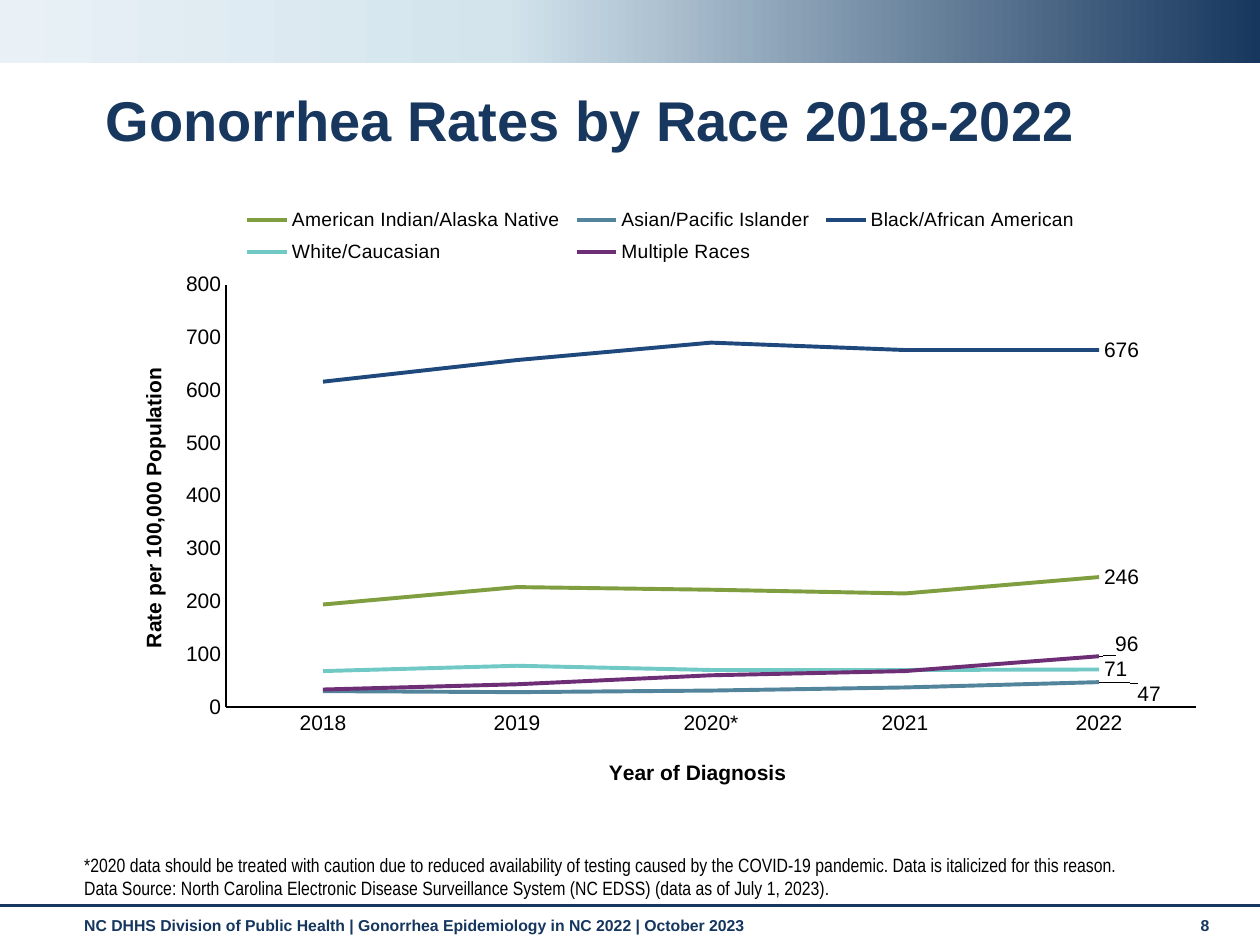
import pptx
import pptx.chart.data
import pptx.dml.color
import pptx.enum.chart
import pptx.enum.shapes
import pptx.enum.text
import pptx.oxml
import pptx.oxml.ns
import pptx.util
from lxml import etree

Inches, Pt = pptx.util.Inches, pptx.util.Pt
XL = pptx.enum.chart
qn = pptx.oxml.ns.qn

COLORS = {
    "navy": "17375E", "footer": "15365E", "text": "000000",
    "pale": "D3E4ED", "mist": "E9F1F6",
}
YEARS = ["2018", "2019", "2020*", "2021", "2022"]
# Name, line colour, yearly rates, shift of the last label as fractions of the chart
SERIES = [
    ("American Indian/Alaska Native", "7F9E3F", (194, 227, 222, 215, 246), None),
    ("Asian/Pacific Islander", "52849C", (30, 28, 31, 37, 47), (0.03, 0.02)),
    ("Black/African American", "1F497D", (616, 657, 690, 676, 676), None),
    ("White/Caucasian", "71C9C5", (68, 78, 70, 70, 71), None),
    ("Multiple Races", "6D2E75", (33, 43, 60, 68, 96), (0.01, -0.02)),
]


def rgb(color):
    return pptx.dml.color.RGBColor.from_string(COLORS.get(color, color))


def style_font(font, size, color="text", bold=False, name="Arial"):
    font.name, font.size, font.bold = name, Pt(size), bold
    font.color.rgb = rgb(color)


def add_text(slide, box, lines, size, color, bold=False, name="Arial",
             anchor=pptx.enum.text.MSO_ANCHOR.TOP, spacing=None):
    tf = slide.shapes.add_textbox(*map(Inches, box)).text_frame
    tf.word_wrap = True
    tf.vertical_anchor = anchor
    tf.text = "\n".join(lines)
    for p in tf.paragraphs:
        style_font(p.font, size, color, bold, name)
        p.line_spacing = spacing


def set_layout(parent, index, x, y, w=None, h=None, inner=False, fixed=True):
    """Place a chart part by fractions of the chart's size."""
    for old in parent.findall(qn("c:layout")):
        parent.remove(old)
    layout = etree.Element(qn("c:layout"))
    manual = etree.SubElement(layout, qn("c:manualLayout"))
    values = [("layoutTarget", "inner" if inner else None),
              ("xMode", "edge" if fixed else None),
              ("yMode", "edge" if fixed else None),
              ("x", x), ("y", y), ("w", w), ("h", h)]
    for tag, value in values:
        if value is not None:
            etree.SubElement(manual, qn("c:" + tag)).set("val", str(value))
    parent.insert(index, layout)


def add_band(slide, left, top, width, height):
    sp = slide.shapes.add_shape(pptx.enum.shapes.MSO_SHAPE.RECTANGLE,
                                Inches(left), Inches(top), Inches(width), Inches(height))
    sp.shadow.inherit = False
    sp.line.fill.background()
    sp.fill.gradient()
    sp.fill.gradient_angle = 180
    stops = sp._element.spPr.find(qn("a:gradFill")).find(qn("a:gsLst"))
    for gs in list(stops):
        stops.remove(gs)
    for percent, color in ((0, "navy"), (60, "pale"), (100, "mist")):
        gs = etree.SubElement(stops, qn("a:gs"), pos=str(percent * 1000))
        etree.SubElement(gs, qn("a:srgbClr"), val=COLORS[color])


def add_footer(slide, left, top, width):
    rule = slide.shapes.add_connector(pptx.enum.shapes.MSO_CONNECTOR.STRAIGHT,
                                      Inches(left), Inches(top),
                                      Inches(left + width), Inches(top))
    rule.line.color.rgb = rgb("navy")
    rule.line.width = Pt(1.75)
    etree.SubElement(rule._element.spPr, qn("a:effectLst"))
    add_text(slide, (left + 0.57, top + 0.03, 8.74, 0.29),
             ["NC DHHS Division of Public Health | Gonorrhea Epidemiology in NC 2022 | October 2023"],
             9, "footer", True)
    add_text(slide, (left + 9.43, top + 0.03, 0.44, 0.3), ["8"], 9, "footer", True)


def style_axis(axis, title, x, y):
    axis.has_major_gridlines = False
    axis.major_tick_mark = axis.minor_tick_mark = XL.XL_TICK_MARK.NONE
    axis.format.line.color.rgb = rgb("text")
    axis.format.line.width = Pt(0.75)
    style_font(axis.tick_labels.font, 12)
    tf = axis.axis_title.text_frame
    tf.text = title
    style_font(tf.paragraphs[0].font, 12, bold=True)
    set_layout(axis.axis_title._element, 1, x, y)


def style_series(series, color, shift):
    series.smooth = False
    series.marker.style = XL.XL_MARKER_STYLE.NONE
    series.format.line.color.rgb = rgb(color)
    series.format.line.width = Pt(2.25)
    # Only the latest year is labelled
    label = series.points[len(YEARS) - 1].data_label
    style_font(label.font, 12)
    label.position = XL.XL_LABEL_POSITION.RIGHT
    if shift:
        set_layout(series._element.find(".//" + qn("c:dLbl")), 1, *shift, fixed=False)


def add_rate_chart(slide, left, top, width, height):
    data = pptx.chart.data.CategoryChartData(number_format="#,##0")
    data.categories = YEARS
    for name, _, values, _ in SERIES:
        data.add_series(name, values)
    chart = slide.shapes.add_chart(XL.XL_CHART_TYPE.LINE, Inches(left), Inches(top),
                                   Inches(width), Inches(height), data).chart
    chart.has_title = False
    style_font(chart.font, 10)
    chart.plots[0].vary_by_categories = False
    for series, (_, color, _, shift) in zip(chart.plots[0].series, SERIES):
        style_series(series, color, shift)

    # Axes
    style_axis(chart.category_axis, "Year of Diagnosis", 0.45, 0.92)
    style_axis(chart.value_axis, "Rate per 100,000 Population", 0.03, 0.28)
    chart.value_axis.minimum_scale = 0
    chart.value_axis.maximum_scale = 800
    chart.value_axis.major_unit = 100
    chart.value_axis.tick_labels.number_format = "#,##0"
    chart.value_axis.tick_labels.number_format_is_linked = False

    # Legend and plot area
    chart.has_legend = True
    chart.legend.position = XL.XL_LEGEND_POSITION.TOP
    chart.legend.include_in_layout = False
    style_font(chart.legend.font, 11)
    set_layout(chart.legend._element, 1, 0.12, 0.01, 0.76, 0.12)
    set_layout(chart._chartSpace.chart.plotArea, 0, 0.107 // 0.01 / 100 + 0.01, 0.15, 0.87, 0.69,
               inner=True)


def main():
    prs = pptx.Presentation()
    prs.slide_width, prs.slide_height = Inches(10), Inches(7.5)
    slide = prs.slides.add_slide(prs.slide_layouts[6])

    add_band(slide, 0, 0, 10, 0.5)
    add_footer(slide, 0, 7.19, 10)
    # Title
    add_text(slide, (0.74, 0.68, 8.58, 0.6), ["Gonorrhea Rates by Race 2018-2022"],
             32, "navy", True, anchor=pptx.enum.text.MSO_ANCHOR.MIDDLE, spacing=0.9)
    add_rate_chart(slide, 0.82, 1.53, 8.85, 4.86)
    # Notes on the data
    add_text(slide, (0.57, 6.83, 9.1, 0.36),
             ["*2020 data should be treated with caution due to reduced availability of testing "
              "caused by the COVID-19 pandemic. Data is italicized for this reason.",
              "Data Source: North Carolina Electronic Disease Surveillance System (NC EDSS) "
              "(data as of July 1, 2023)."],
             11, "text", name="Arial Narrow", anchor=pptx.enum.text.MSO_ANCHOR.BOTTOM)
    prs.save("out.pptx")


if __name__ == "__main__":
    main()
